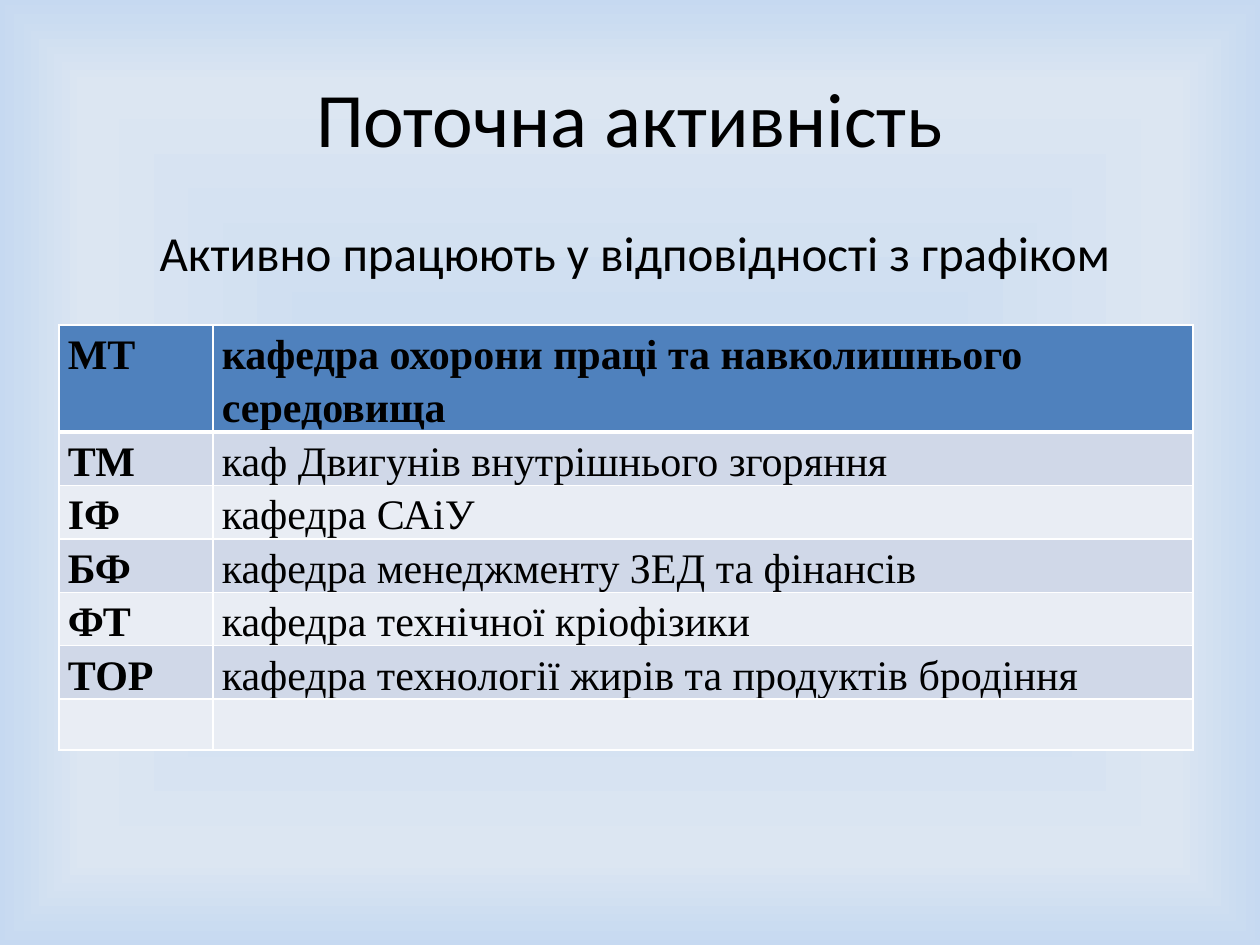
import pptx
import pptx.dml.color
import pptx.enum.text
import pptx.oxml
import pptx.oxml.ns
import pptx.util

Pt = pptx.util.Pt
ANCHOR = pptx.enum.text.MSO_ANCHOR
ALIGN = pptx.enum.text.PP_ALIGN

COLORS = {
    "text": "000000",
    "header": "4F81BD",
    "odd": "D0D8E8",
    "even": "E9EDF4",
    "border": "FFFFFF",
}
BACKGROUND = [
    (0, "C6D9F1"), (31, "CEDEF1"), (82, "DCE6F2"), (95, "CCDDF1"),
    (97, "CADCF1"), (99, "C8DAF1"), (100, "C6D9F1"), (100, "8EB4E3"),
]
DEPARTMENTS = [
    ("МТ", "кафедра охорони праці та навколишнього середовища"),
    ("ТМ", "каф Двигунів внутрішнього згоряння"),
    ("ІФ", "кафедра САіУ"),
    ("БФ", "кафедра менеджменту ЗЕД та фінансів"),
    ("ФТ", "кафедра технічної кріофізики"),
    ("ТОР", "кафедра технології жирів та продуктів бродіння"),
    ("", ""),
]


def rgb(name):
    return pptx.dml.color.RGBColor.from_string(COLORS[name])


def format_text(p, font, size, bold=False):
    for r in p.runs:
        r.font.name = font
        r.font.size = Pt(size)
        r.font.bold = bold
        r.font.color.rgb = rgb("text")


def set_background(s):
    """Fill the background with a rectangular gradient around the centre."""
    fill = s.background.fill
    fill.gradient()
    stops = "".join(
        f'<a:gs pos="{pos * 1000}"><a:srgbClr val="{color}"/></a:gs>'
        for pos, color in BACKGROUND)
    grad = pptx.oxml.parse_xml(
        f'<a:gradFill {pptx.oxml.ns.nsdecls("a")} rotWithShape="1">'
        f'<a:gsLst>{stops}</a:gsLst><a:path path="rect">'
        '<a:fillToRect l="50000" t="50000" r="50000" b="50000"/>'
        '</a:path></a:gradFill>')
    old = s._element.find(".//" + pptx.oxml.ns.qn("a:gradFill"))
    old.getparent().replace(old, grad)


def add_title(s, x, y, w, h):
    sp = s.shapes.title
    sp.left, sp.top, sp.width, sp.height = Pt(x), Pt(y), Pt(w), Pt(h)
    tf = sp.text_frame
    tf.text = "Поточна активність"
    tf.vertical_anchor = ANCHOR.MIDDLE
    p = tf.paragraphs[0]
    p.alignment = ALIGN.CENTER
    format_text(p, "Calibri", 44)


def add_subtitle(s, x, y, w, h):
    tf = s.shapes.add_textbox(Pt(x), Pt(y), Pt(w), Pt(h)).text_frame
    tf.word_wrap = False
    tf.auto_size = pptx.enum.text.MSO_AUTO_SIZE.SHAPE_TO_FIT_TEXT
    tf.text = "Активно працюють у відповідності з графіком"
    format_text(tf.paragraphs[0], "Calibri", 28)


def set_borders(cell, bottom):
    tcPr = cell._tc.get_or_add_tcPr()
    for side, width in (("L", 1), ("R", 1), ("T", 1), ("B", bottom)):
        tcPr.append(pptx.oxml.parse_xml(
            f'<a:ln{side} {pptx.oxml.ns.nsdecls("a")} w="{Pt(width)}">'
            f'<a:solidFill><a:srgbClr val="{COLORS["border"]}"/></a:solidFill>'
            f'</a:ln{side}>'))


def fill_cell(cell, text, bold, middle):
    cell.margin_left = cell.margin_right = Pt(5)
    cell.margin_top = cell.margin_bottom = 0
    cell.vertical_anchor = ANCHOR.MIDDLE if middle else ANCHOR.TOP
    cell.text_frame.text = text
    p = cell.text_frame.paragraphs[0]
    p.line_spacing = 1.15
    format_text(p, "Times New Roman", 24, bold)


def add_departments(s, x, y, w, h):
    code_width, header_height, row_height = 88, 50, 24
    frame = s.shapes.add_table(len(DEPARTMENTS), 2, Pt(x), Pt(y), Pt(w), Pt(h))
    table = frame.table
    table.columns[0].width = Pt(code_width)
    table.columns[1].width = Pt(w - code_width)
    for i, texts in enumerate(DEPARTMENTS):
        header = i == 0
        table.rows[i].height = Pt(header_height if header else row_height)
        band = "header" if header else "odd" if i % 2 else "even"
        for j, text in enumerate(texts):
            cell = table.cell(i, j)
            set_borders(cell, 3 if header else 1)
            cell.fill.solid()
            cell.fill.fore_color.rgb = rgb(band)
            if text:
                fill_cell(cell, text, bold=header or j == 0, middle=j == 1)
    frame.height = Pt(h)


def main():
    prs = pptx.Presentation()
    prs.slide_width, prs.slide_height = Pt(720), Pt(540)
    s = prs.slides.add_slide(prs.slide_layouts[5])
    set_background(s)
    add_title(s, 36, 21.6, 648, 90)
    add_departments(s, 33.8, 185.8, 648, 260.6)
    add_subtitle(s, 84.2, 123.8, 563.8, 41)
    prs.save("out.pptx")


if __name__ == "__main__":
    main()
